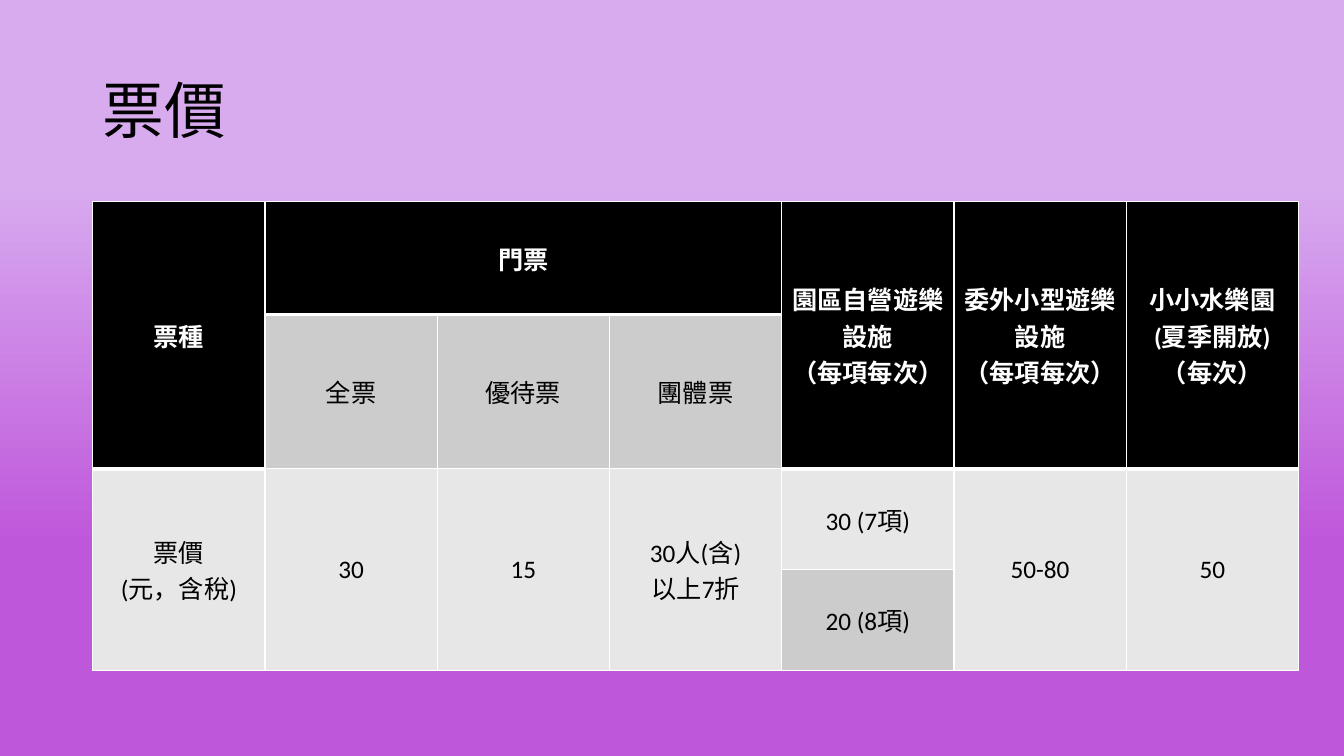
from lxml.etree import SubElement
from pptx import Presentation
from pptx.dml.color import RGBColor
from pptx.enum.text import MSO_ANCHOR as Anchor, PP_ALIGN as Align
from pptx.oxml.ns import qn
from pptx.util import Inches, Pt

BLACK, WHITE, GREY, PALE = "000000", "FFFFFF", "CCCCCC", "E7E7E7"
COLUMNS = 7
ROW_HEIGHTS = [1.12, 1.53, 1, 1]
TITLE_BOX = (0.92, 0.4, 11.5, 1.45)
TABLE_BOX = (0.92, 2, 11.96, 4.64)
PRICES = [
    (0, 0, 2, 1, BLACK, "票種"),
    (0, 1, 1, 3, BLACK, "門票"),
    (0, 4, 2, 1, BLACK, "園區自營遊樂設施\v（每項每次）"),
    (0, 5, 2, 1, BLACK, "委外小型遊樂設施\v（每項每次）"),
    (0, 6, 2, 1, BLACK, "小小水樂園\v(夏季開放)\v（每次）"),
    (1, 1, 1, 1, GREY, "全票"),
    (1, 2, 1, 1, GREY, "優待票"),
    (1, 3, 1, 1, GREY, "團體票"),
    (2, 0, 2, 1, PALE, "票價\v(元，含稅)"),
    (2, 1, 2, 1, PALE, "30"),
    (2, 2, 2, 1, PALE, "15"),
    (2, 3, 2, 1, PALE, "30人(含)\v以上7折"),
    (2, 4, 1, 1, PALE, "30 (7項)"),
    (2, 5, 2, 1, PALE, "50-80"),
    (2, 6, 2, 1, PALE, "50"),
    (3, 4, 1, 1, GREY, "20 (8項)"),
]


def color(value):
    return RGBColor.from_string(value)


def paint_background(page):
    fill = page.background.fill
    fill.gradient()
    fill.gradient_angle = 270
    for stop, position, value in zip(fill.gradient_stops, (0.24, 0.72), ("D8ABEF", "BF57DB")):
        stop.position = position
        stop.color.rgb = color(value)


def format_para(para, size, font, value, bold, align):
    para.alignment = align
    para.font.size = Pt(size)
    para.font.name = font
    para.font.bold = bold
    para.font.color.rgb = color(value)


def place_title(page, box):
    title = page.shapes.title
    title.left, title.top, title.width, title.height = map(Inches, box)
    frame = title.text_frame
    frame.text = "票價"
    frame.vertical_anchor = Anchor.MIDDLE
    para = frame.paragraphs[0]
    para.line_spacing = 0.9
    format_para(para, 44, "Noto Sans CJK JP", BLACK, False, Align.LEFT)


def draw_borders(cell, top, bottom):
    properties = cell._tc.get_or_add_tcPr()
    widths = {"a:lnL": 1, "a:lnR": 1, "a:lnT": top, "a:lnB": bottom}
    for index, (tag, width) in enumerate(widths.items()):
        line = SubElement(properties, qn(tag), w=str(Pt(width)))
        properties.insert(index, line)
        fill = SubElement(line, qn("a:solidFill"))
        SubElement(fill, qn("a:srgbClr"), val=WHITE)


def fill_cell(cell, fill, text):
    header = fill == BLACK
    cell.vertical_anchor = Anchor.MIDDLE
    cell.margin_left = cell.margin_right = cell.margin_top = cell.margin_bottom = Inches(0.03)
    cell.text_frame.text = text
    format_para(cell.text_frame.paragraphs[0], 18, "Calibri",
                WHITE if header else BLACK, header, Align.CENTER)


def place_prices(page, box):
    left, top, width, height = map(Inches, box)
    table = page.shapes.add_table(len(ROW_HEIGHTS), COLUMNS, left, top, width, height).table
    table.horz_banding = False
    for column in table.columns:
        column.width = width // COLUMNS
    for row, row_height in zip(table.rows, ROW_HEIGHTS):
        row.height = Inches(row_height)
    below_header = {(row + tall, column + step)
                    for row, column, tall, wide, fill, text in PRICES if fill == BLACK
                    for step in range(wide)}
    for row, column, tall, wide, fill, text in PRICES:
        origin = table.cell(row, column)
        if tall * wide > 1:
            origin.merge(table.cell(row + tall - 1, column + wide - 1))
        fill_cell(origin, fill, text)
        for y in range(row, row + tall):
            for x in range(column, column + wide):
                cell = table.cell(y, x)
                cell.fill.solid()
                cell.fill.fore_color.rgb = color(fill)
                draw_borders(cell, 3 if (y, x) in below_header else 1,
                             3 if (y + 1, x) in below_header else 1)


def main():
    deck = Presentation()
    deck.slide_width, deck.slide_height = Inches(13.33), Inches(7.5)
    page = deck.slides.add_slide(deck.slide_layouts[5])
    paint_background(page)
    place_title(page, TITLE_BOX)
    place_prices(page, TABLE_BOX)
    deck.save("out.pptx")


if __name__ == "__main__":
    main()
